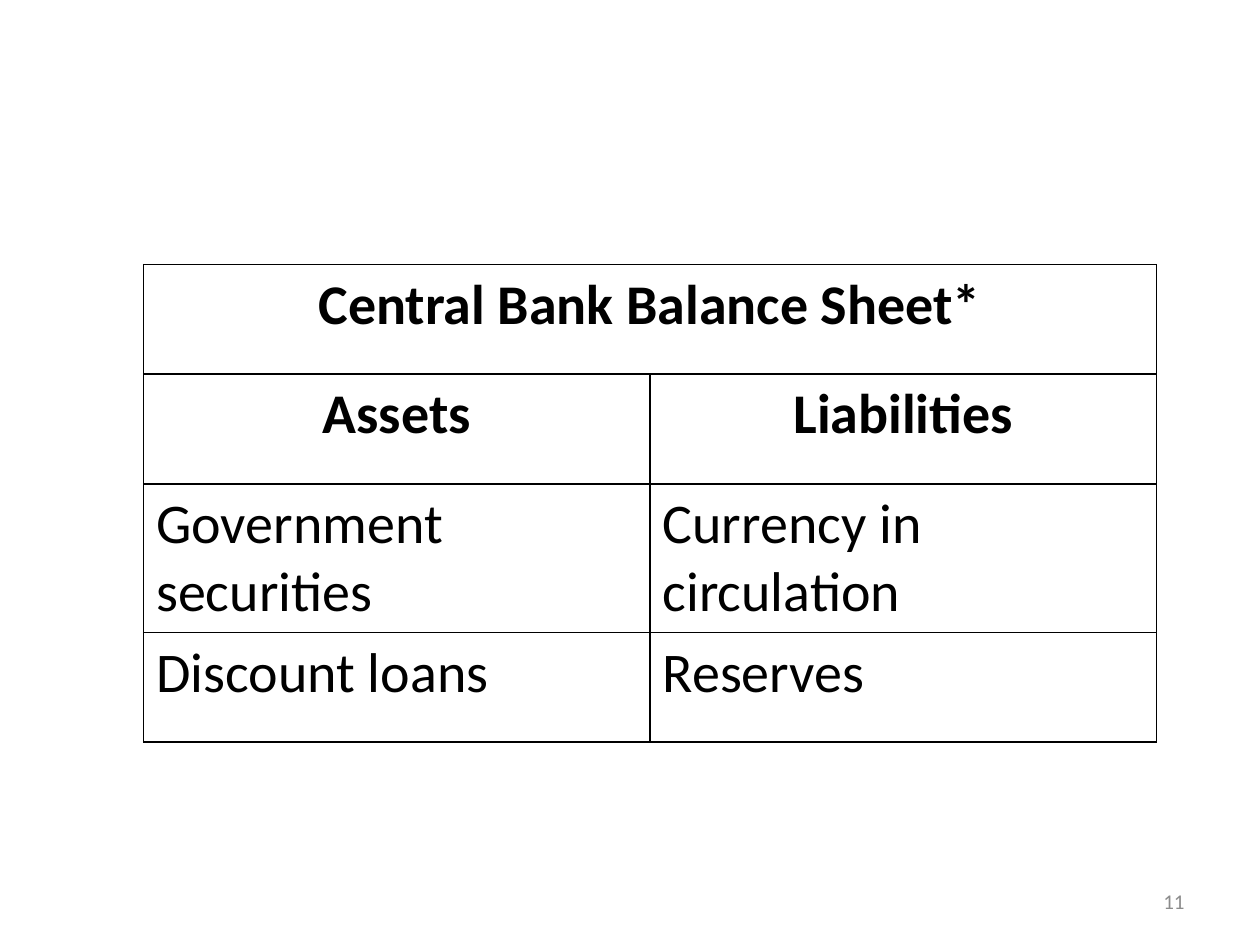
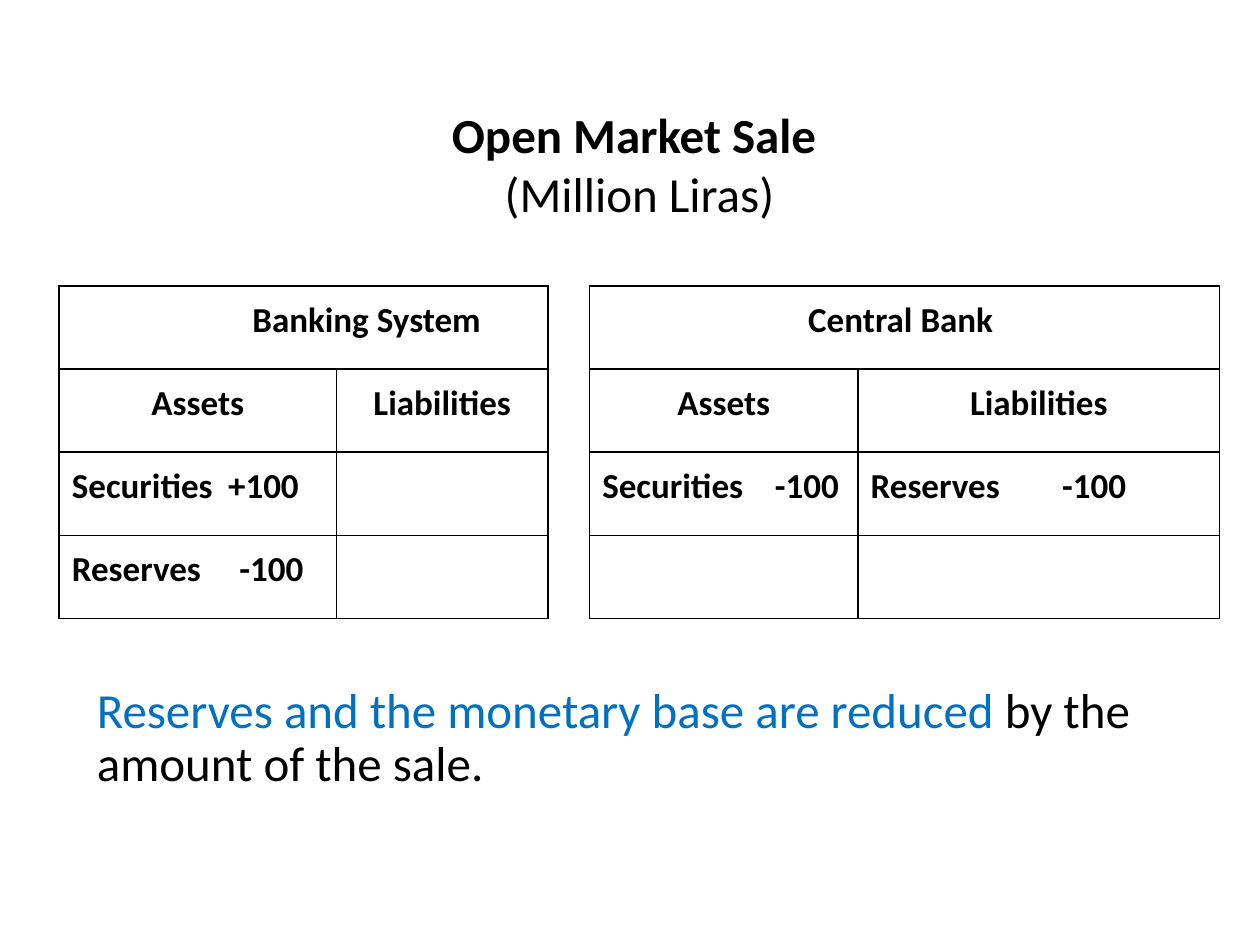
from lxml.etree import SubElement
from pptx import Presentation
from pptx.dml.color import RGBColor
from pptx.enum.text import MSO_ANCHOR, PP_ALIGN
from pptx.oxml.ns import qn
from pptx.util import Inches, Pt

COLORS = {"text": "000000", "accent": "0070C0", "muted": "8C8C8C"}
FONT = "Calibri"
TITLE_ONLY, BLANK = 5, 6
HEADING_ROWS = 2


class Deck:
    def __init__(self):
        self.presentation = Presentation()
        self.presentation.slide_width = Inches(10)
        self.presentation.slide_height = Inches(7.5)
        self.slide = None

    def add_slide(self, layout):
        self.slide = self.presentation.slides.add_slide(self.presentation.slide_layouts[layout])

    def style(self, paragraph, size, color="text", bold=False, align=PP_ALIGN.LEFT, spacing=1.0):
        paragraph.alignment = align
        paragraph.line_spacing = spacing
        font = paragraph.font
        font.name, font.size, font.bold = FONT, Pt(size), bold
        font.color.rgb = RGBColor.from_string(COLORS[color])

    def title(self, box, heading, unit, size):
        shape = self.slide.shapes.title
        shape.left, shape.top, shape.width, shape.height = map(Inches, box)
        frame = shape.text_frame
        frame.vertical_anchor = MSO_ANCHOR.TOP
        frame.text = f"{heading}\n{unit}"
        for paragraph, bold in zip(frame.paragraphs, (True, False)):
            self.style(paragraph, size, bold=bold, align=PP_ALIGN.CENTER)

    def text(self, box, runs, size, anchor=MSO_ANCHOR.TOP, **style):
        frame = self.slide.shapes.add_textbox(*map(Inches, box)).text_frame
        frame.word_wrap = True
        frame.vertical_anchor = anchor
        paragraph = frame.paragraphs[0]
        self.style(paragraph, size, **style)
        for text, color in runs:
            run = paragraph.add_run()
            run.text = text
            run.font.color.rgb = RGBColor.from_string(COLORS[color])

    def borders(self, cell, widths):
        properties = cell._tc.get_or_add_tcPr()
        for side in "LRTB":
            line = SubElement(properties, qn(f"a:ln{side}"), w=str(Pt(widths[side])))
            if widths[side]:
                fill = SubElement(line, qn("a:solidFill"))
                SubElement(fill, qn("a:srgbClr"), val=COLORS["text"])
            else:
                SubElement(line, qn("a:noFill"))

    def tab_stop(self, paragraph, position):
        tabs = SubElement(paragraph._p.get_or_add_pPr(), qn("a:tabLst"))
        SubElement(tabs, qn("a:tab"), pos=str(Inches(position)), algn="l")

    def balance_sheet(self, left, top, columns, heights, rows, size, merges,
                      body_bold=False, spacing=1.0, gap=None, divider=None):
        table = self.slide.shapes.add_table(
            len(heights), len(columns), Inches(left), Inches(top),
            Inches(sum(columns)), Inches(sum(heights))).table
        table.first_row = table.horz_banding = False
        for column, width in zip(table.columns, columns):
            column.width = Inches(width)
        for row, height in zip(table.rows, heights):
            row.height = Inches(height)
        for start, end in merges:
            table.cell(*start).merge(table.cell(*end))
        for r, row in enumerate(rows):
            for c, content in enumerate(row):
                cell = table.cell(r, c)
                widths = dict.fromkeys("LRTB", 1)
                if c == gap:
                    widths.update(T=0, B=0)
                elif r == HEADING_ROWS - 1:
                    widths["B"] = 1.5
                elif r == HEADING_ROWS:
                    widths["T"] = 1.5
                if divider is not None and r > 0:
                    widths["R" if c < divider else "L"] = 1.5
                self.borders(cell, widths)
                cell.fill.background()
                text, tab = content if isinstance(content, tuple) else (content, None)
                paragraph = cell.text_frame.paragraphs[0]
                if text:
                    paragraph.add_run().text = text
                if tab:
                    self.tab_stop(paragraph, tab)
                heading = r < HEADING_ROWS
                self.style(paragraph, size, bold=heading or body_bold, spacing=spacing,
                           align=PP_ALIGN.CENTER if heading else PP_ALIGN.LEFT)
        return table


def central_bank_slide(deck):
    deck.add_slide(BLANK)
    deck.text((7.17, 6.95, 2.33, 0.4), [("11", "muted")], 12, MSO_ANCHOR.MIDDLE,
              color="muted", align=PP_ALIGN.RIGHT)
    rows = [
        ["Central Bank Balance Sheet*", ""],
        ["Assets", "Liabilities"],
        ["Government securities", "Currency in circulation"],
        ["Discount loans", "Reserves"],
    ]
    deck.balance_sheet(1.14, 2.1, [4.02] * 2, [0.87, 0.87, 1.18, 0.87], rows, 32,
                       [((0, 0), (0, 1))], divider=1)


def open_market_sale_slide(deck):
    deck.add_slide(TITLE_ONLY)
    deck.title((2.42, 0.78, 5.31, 1.51), "Open Market Sale ", "(Million Liras)", 28)
    rows = [
        ["Banking System", "", "", "Central Bank ", ""],
        ["Assets", "Liabilities", "", "Assets", "Liabilities"],
        [("Securities\t+100", 1.24), "", "", ("Securities\t-100", 1.37), ("Reserves\t-100", 1.52)],
        [("Reserves\t-100", 1.33), "", "", "", ""],
    ]
    merges = [((0, 0), (0, 1)), ((0, 2), (2, 2)), ((0, 3), (0, 4))]
    table = deck.balance_sheet(0.47, 2.27, [2.2, 1.68, 0.33, 2.13, 2.87], [0.66] * 4, rows, 20,
                               merges, body_bold=True, spacing=1.15, gap=2)
    table.cell(0, 0).margin_left = Inches(1.1)
    deck.text((0.67, 5.4, 9.02, 0.95),
              [("Reserves and the monetary base are reduced ", "accent"),
               ("by the amount of the sale.", "text")], 28, spacing=0.9)


def main():
    deck = Deck()
    central_bank_slide(deck)
    open_market_sale_slide(deck)
    deck.presentation.save("out.pptx")


if __name__ == "__main__":
    main()
